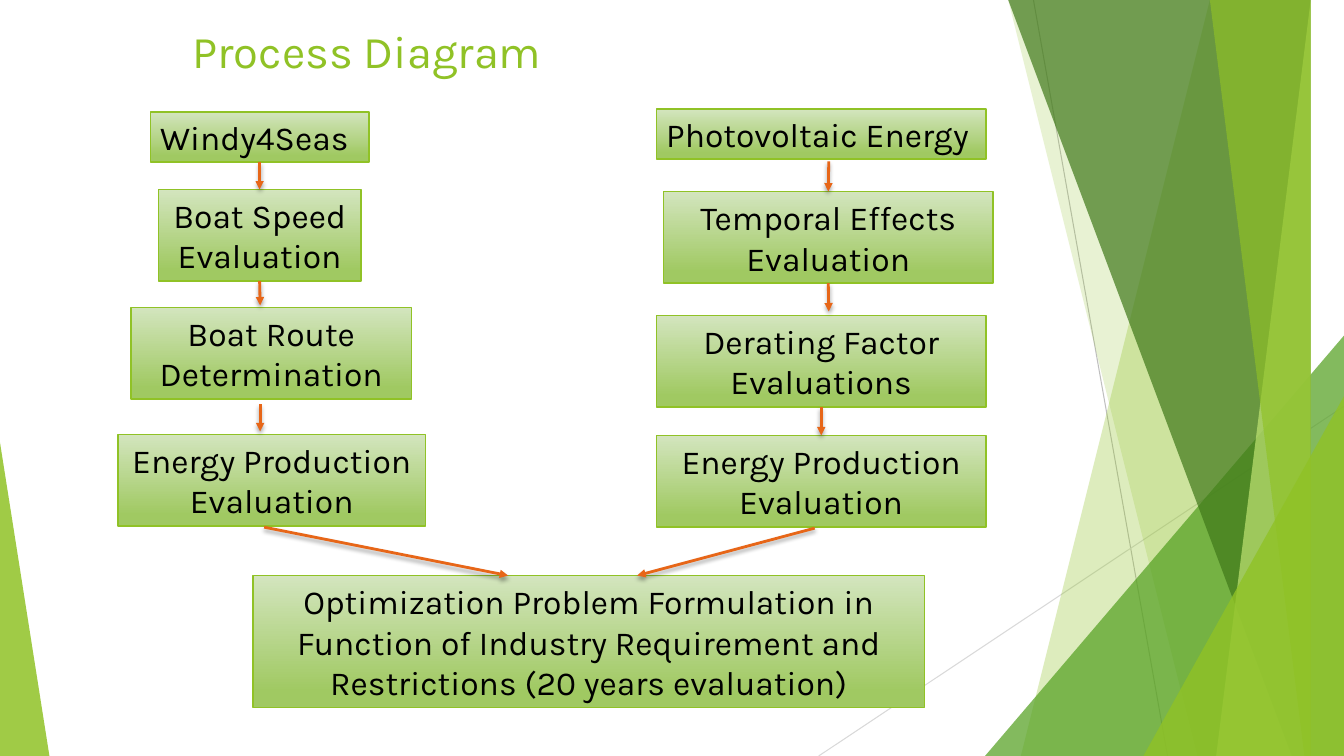
from lxml import etree
from pptx import Presentation, oxml
from pptx.dml.color import RGBColor
from pptx.enum import shapes, text
from pptx.oxml import ns
from pptx.util import Inches, Pt

LIME = RGBColor(0x90, 0xC2, 0x26)
GREEN = RGBColor(0x54, 0xA0, 0x21)
DARK = RGBColor(0x3F, 0x78, 0x19)
PALE = RGBColor(0xC0, 0xE4, 0x74)
LIGHT = RGBColor(0xD3, 0xE5, 0xBE)
OLIVE = RGBColor(0xA0, 0xC9, 0x62)
ORANGE = RGBColor(0xE7, 0x66, 0x18)
GRAY = RGBColor(0xBF, 0xBF, 0xBF)
SILVER = RGBColor(0xD9, 0xD9, 0xD9)
BLACK = RGBColor(0, 0, 0)

deck = Presentation()
deck.slide_width, deck.slide_height = Inches(13.33), Inches(7.5)
slide = deck.slides.add_slide(deck.slide_layouts[6])
tree = slide.shapes


def draw_line(x1, y1, x2, y2, color, width):
    line = tree.add_connector(
        shapes.MSO_CONNECTOR.STRAIGHT, Inches(x1), Inches(y1), Inches(x2), Inches(y2))
    line.line.color.rgb = color
    line.line.width = Pt(width)
    glow = etree.SubElement(line._element.spPr, ns.qn("a:effectLst"))
    return line, glow


def tint(shape, color, alpha):
    shape.shadow.inherit = False
    shape.line.fill.background()
    shape.fill.solid()
    shape.fill.fore_color.rgb = color
    node = shape._element.spPr.find(".//" + ns.qn("a:srgbClr"))
    etree.SubElement(node, ns.qn("a:alpha")).set("val", str(alpha * 1000))


draw_line(10.25, 0, 11.58, 7.5, GRAY, 0.75)
draw_line(13.33, 4.03, 8.12, 7.5, SILVER, 0.75)

TOP, LOW, EDGE = -0.01, 7.5, 13.33
facets = [
    ("band", 12.28, 10.04, LIME, 30),
    ("band", 10.5, 11.83, LIME, 20),
    ("wedge", (9.77, 3.33, 3.56, 4.17), 1, GREEN, 72),
    ("band", 10.21, 12.91, DARK, 70),
    ("band", 13.03, 11.92, PALE, 70),
    ("band", 11.96, 13.18, LIME, 65),
    ("wedge", (11.34, 3.93, 1.99, 3.57), 1, LIME, 80),
    ("wedge", (0, 4.39, 0.49, 3.11), 0, LIME, 85),
]
for kind, first, second, color, alpha in facets:
    if kind == "band":
        path = tree.build_freeform(first, TOP, scale=Inches(1))
        path.add_line_segments([(EDGE, TOP), (EDGE, LOW), (second, LOW)], close=True)
        facet = path.convert_to_shape()
    else:
        facet = tree.add_shape(
            shapes.MSO_SHAPE.ISOSCELES_TRIANGLE, *[Inches(v) for v in first])
        facet.adjustments[0] = second
    tint(facet, color, alpha)

title = tree.add_textbox(Inches(1.81), Inches(0.15), Inches(9.4), Inches(0.7))
frame = title.text_frame
frame.word_wrap = True
frame.vertical_anchor = text.MSO_ANCHOR.MIDDLE
frame.text = "Process Diagram"
font = frame.paragraphs[0].runs[0].font
font.name, font.size, font.color.rgb = "Karla", Pt(32.4), LIME

LEFT, MID = text.PP_ALIGN.LEFT, text.PP_ALIGN.CENTER
steps = [
    ("wind", "Windy4Seas", 1.49, 1.11, 2.17, 0.5, LEFT),
    ("solar", "Photovoltaic Energy", 6.51, 1.08, 3.27, 0.5, LEFT),
    ("goal", "Optimization Problem Formulation in Function of Industry Requirement "
     "and Restrictions (20 years evaluation)", 2.51, 5.71, 6.66, 1.31, MID),
    ("speed", "Boat Speed Evaluation", 1.57, 1.88, 2.01, 0.91, MID),
    ("route", "Boat Route Determination", 1.3, 3.05, 2.78, 0.91, MID),
    ("yield", "Energy Production Evaluation", 1.17, 4.31, 3.05, 0.91, MID),
    ("time", "Temporal Effects Evaluation", 6.58, 1.9, 3.27, 0.91, MID),
    ("derate", "Derating Factor Evaluations", 6.51, 3.13, 3.27, 0.91, MID),
    ("power", "Energy Production Evaluation", 6.51, 4.32, 3.27, 0.91, MID),
]
boxes = {}
for key, label, x, y, w, h, align in steps:
    box = tree.add_shape(
        shapes.MSO_SHAPE.RECTANGLE, Inches(x), Inches(y), Inches(w), Inches(h))
    box.shadow.inherit = False
    box.fill.gradient()
    box.fill.gradient_angle = 270
    for stop, color, place in zip(box.fill.gradient_stops, (LIGHT, OLIVE), (0, 0.88)):
        stop.color.rgb = color
        stop.position = place
    box.line.color.rgb = LIME
    box.line.width = Pt(1)
    frame = box.text_frame
    frame.word_wrap = True
    frame.auto_size = text.MSO_AUTO_SIZE.SHAPE_TO_FIT_TEXT
    frame.text = label
    para = frame.paragraphs[0]
    para.alignment = align
    font = para.runs[0].font
    font.name, font.size, font.color.rgb = "Karla", Pt(24), BLACK
    boxes[key] = box

arrows = [
    (2.58, 1.62, 2.58, 1.88, "wind", "speed"),
    (2.58, 2.77, 2.58, 3.03, "speed", None),
    (2.58, 4.01, 2.58, 4.28, None, None),
    (8.22, 1.6, 8.22, 1.87, None, "time"),
    (8.22, 2.83, 8.22, 3.09, "time", None),
    (8.15, 4, 8.15, 4.26, "derate", "power"),
    (2.62, 5.23, 5.04, 5.71, None, None),
    (8.08, 5.24, 6.32, 5.71, None, None),
]
for x1, y1, x2, y2, start, end in arrows:
    arrow, glow = draw_line(x1, y1, x2, y2, ORANGE, 2)
    if start:
        arrow.begin_connect(boxes[start], 2)
    if end:
        arrow.end_connect(boxes[end], 0)
    tip = etree.SubElement(arrow.line._get_or_add_ln(), ns.qn("a:tailEnd"))
    tip.set("type", "triangle")
    glow.append(oxml.parse_xml(
        f'<a:outerShdw {ns.nsdecls("a")} blurRad="{Pt(3)}" dist="{Pt(2)}" '
        'dir="5400000" rotWithShape="0"><a:srgbClr val="000000">'
        '<a:alpha val="35000"/></a:srgbClr></a:outerShdw>'))

deck.save("out.pptx")
